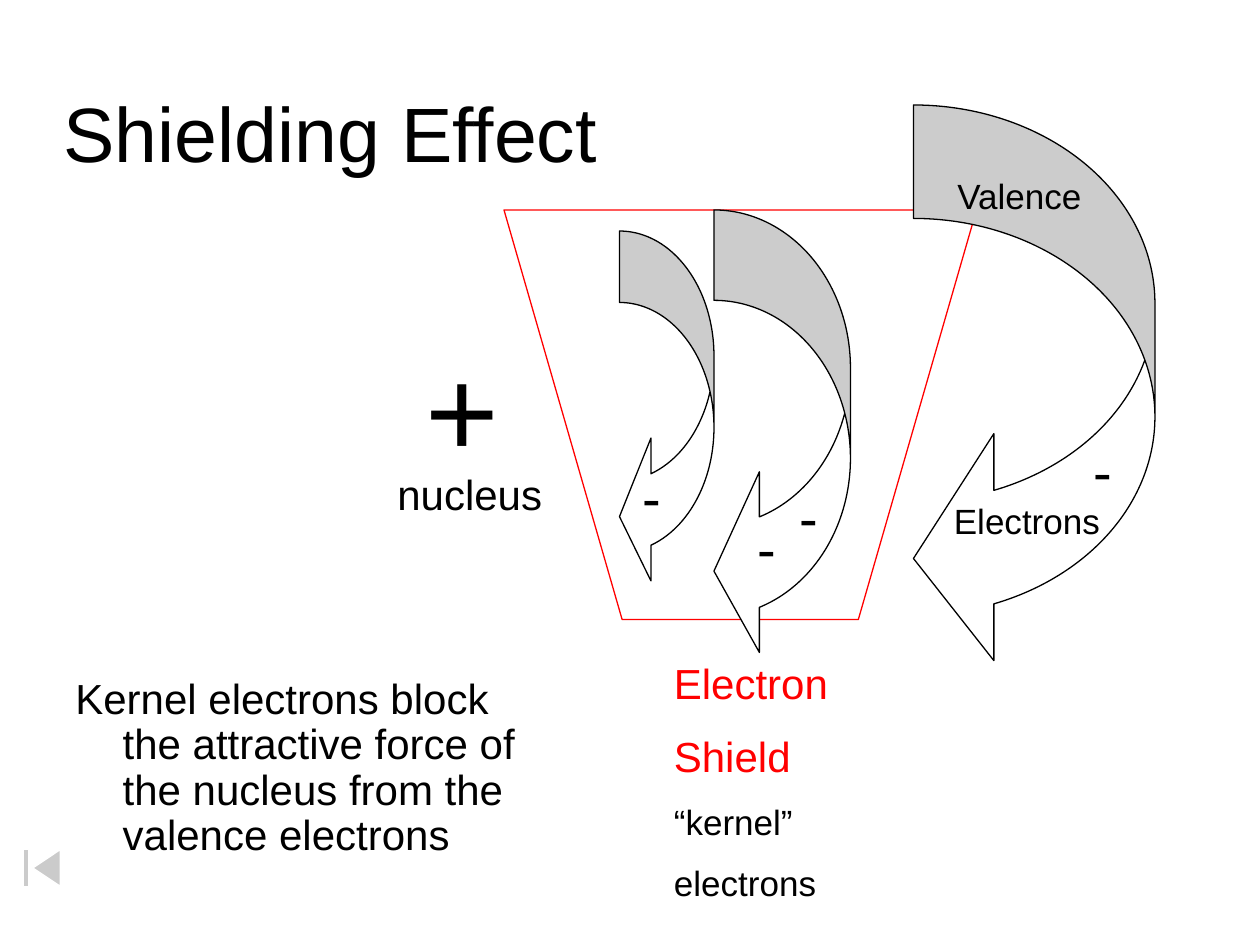
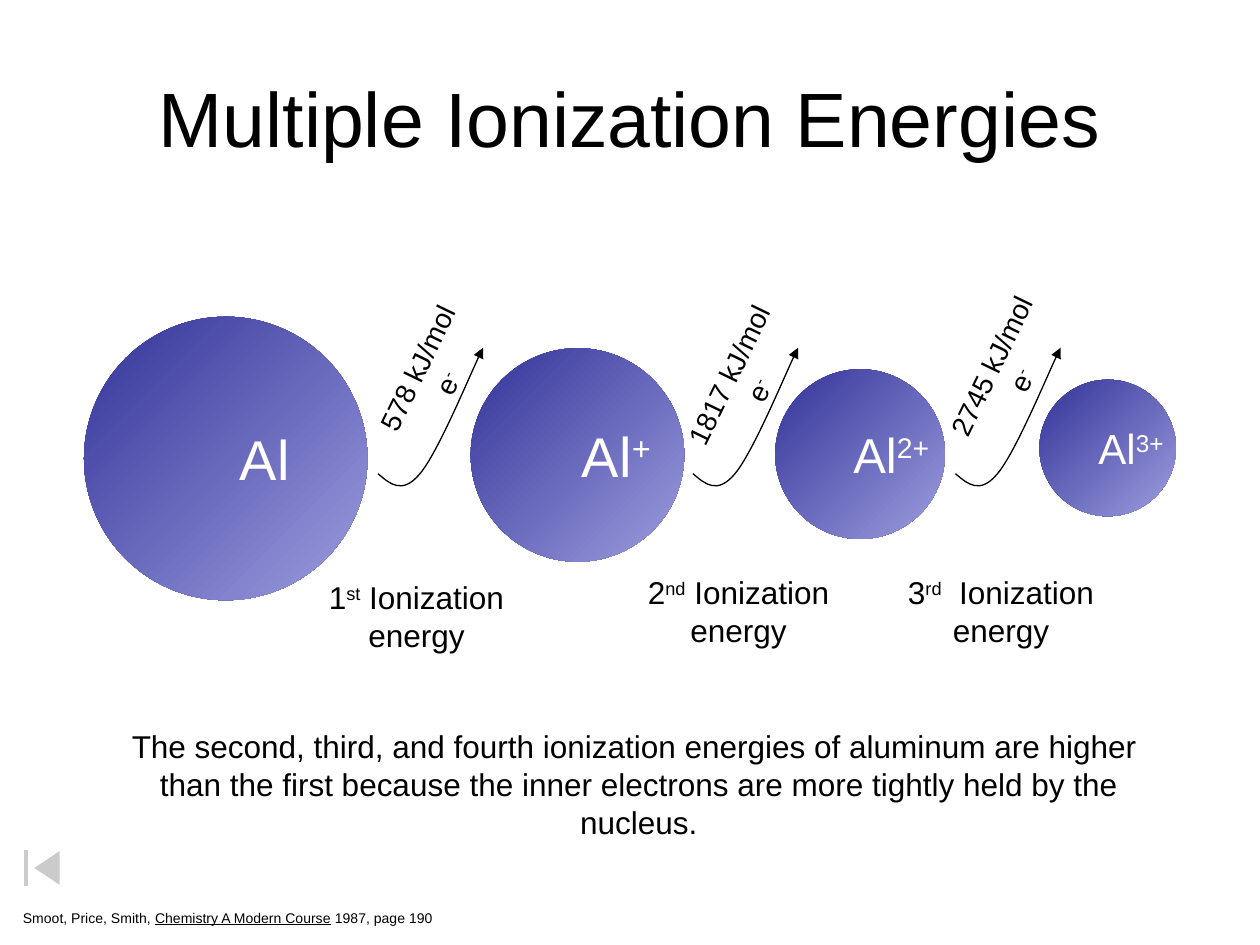
from lxml.etree import SubElement
from pptx import Presentation
from pptx.dml.color import RGBColor
from pptx.enum.shapes import MSO_SHAPE
from pptx.enum.text import MSO_ANCHOR, MSO_AUTO_SIZE, PP_ALIGN
from pptx.oxml.ns import qn
from pptx.util import Pt

# Shared look
FONT = "Arial"
BLACK, WHITE, RED = "000000", "FFFFFF", "FF0000"
DARK, LIGHT = "333399", "9D9DDF"
LEFT, MID = PP_ALIGN.LEFT, PP_ALIGN.CENTER
SPACE = 8.9  # width of one space at 32 pt


def color(code):
    return RGBColor.from_string(code)


def place(box):
    return [Pt(v) for v in box]


def shift(box, x, y, w, h):
    """Place a part relative to the corner of its region."""
    return box[0] + x, box[1] + y, w, h


def paint(shape, fill, line):
    shape.shadow.inherit = False
    if fill:
        shape.fill.solid()
        shape.fill.fore_color.rgb = color(fill)
    else:
        shape.fill.background()
    shape.line.color.rgb = color(line)
    shape.line.width = Pt(0.75)


def add_run(para, text, size, code=BLACK, style=""):
    run = para.add_run()
    run.text = text
    font = run.font
    font.name, font.size = FONT, Pt(size)
    font.color.rgb = color(code)
    if style == "sup":
        font._element.set("baseline", "30000")
    elif style == "line":
        font.underline = True


def write(frame, lines, size, code=BLACK, align=LEFT):
    """Each line is a list of (text, style) runs."""
    for i, line in enumerate(lines):
        para = frame.add_paragraph() if i else frame.paragraphs[0]
        para.alignment = align
        for text, style in line:
            add_run(para, text, size, code, style)


def add_text(slide, box, lines, size, align=LEFT, wrap=False):
    shape = slide.shapes.add_textbox(*place(box))
    frame = shape.text_frame
    frame.word_wrap = wrap
    if not wrap:
        frame.auto_size = MSO_AUTO_SIZE.SHAPE_TO_FIT_TEXT
    write(frame, lines, size, align=align)
    return shape


def plain(*texts):
    return [[(text, "")] for text in texts]


def add_slide(deck, title, box):
    slide = deck.slides.add_slide(deck.slide_layouts[5])
    head = slide.shapes.title
    head.left, head.top, head.width, head.height = place(box)
    head.text_frame.vertical_anchor = MSO_ANCHOR.MIDDLE
    write(head.text_frame, plain(title), 44, align=MID)
    return slide


def add_button(slide):
    shape = slide.shapes.add_shape(
        MSO_SHAPE.ACTION_BUTTON_BEGINNING, *place((0, 482, 48, 28)))
    paint(shape, WHITE, WHITE)
    tint = shape.fill._xPr.find(qn("a:solidFill")).find(qn("a:srgbClr"))
    SubElement(tint, qn("a:alpha"), val="50000")


# Shielding slide
def add_shield(slide, box):
    _, _, w, h = box
    x, y = box[:2]
    pen = slide.shapes.build_freeform(Pt(x), Pt(y))
    pen.add_line_segments([(Pt(x + a * w), Pt(y + b * h))
                           for a, b in ((0.25, 1), (0.75, 1), (1, 0))])
    paint(pen.convert_to_shape(), WHITE, RED)


def add_orbit(slide, box, bends):
    shape = slide.shapes.add_shape(MSO_SHAPE.CURVED_LEFT_ARROW, *place(box))
    paint(shape, WHITE, BLACK)
    for i, bend in enumerate(bends):
        shape.adjustments[i] = bend


def add_atom(slide, box):
    def label(text, size, *part):
        add_text(slide, shift(box, *part), plain(text), size)

    def minus(x, y):
        label("-", 32, x, y, 25, 45)

    add_shield(slide, shift(box, 72, 60, 270, 234))
    label("+", 72, 20, 126, 56, 94)
    label("nucleus", 24, 4, 204, 97, 36)

    # Valence shell
    add_orbit(slide, shift(box, 306, 0, 138, 324), (0.47, 0.94, 0.333))
    label("Valence", 20, 324, 36, 87, 31)
    label("Electrons", 20, 322, 222, 98, 31)
    minus(402, 186)

    # Kernel shells
    add_orbit(slide, shift(box, 192, 60, 78, 258), (0.662, 1.323, 0.333))
    add_orbit(slide, shift(box, 138, 72, 54, 204), (0.756, 1.511, 0.333))
    for x, y in ((144, 200.6), (210, 230), (234, 212)):
        minus(x, y)


def add_key(slide, box):
    frame = add_text(slide, box, [], 24, wrap=True).text_frame
    rows = (("Electron", 24, RED), ("Shield", 24, RED),
            ("“kernel”", 20, BLACK), ("electrons", 20, BLACK))
    for i, (text, size, code) in enumerate(rows):
        para = frame.add_paragraph() if i else frame.paragraphs[0]
        para.space_before = Pt(size * 0.55)
        add_run(para, text, size, code)


def add_note(slide, box):
    text = ("Kernel electrons block the attractive force of the nucleus "
            "from the valence electrons")
    para = add_text(slide, box, plain(text), 24,
                    wrap=True).text_frame.paragraphs[0]
    para.line_spacing = 0.9
    props = para._p.get_or_add_pPr()
    props.set("marL", str(Pt(27)))
    props.set("indent", str(Pt(-27)))


def shield_slide(deck):
    slide = add_slide(deck, "Shielding Effect", (12, 30, 354, 90))
    add_note(slide, (36, 384, 276, 120))
    add_atom(slide, (216, 60, 444, 324))
    add_key(slide, (378, 372, 126, 151))
    add_button(slide)


# Ionization slide
def add_ion(slide, box, charge, size, pad):
    shape = slide.shapes.add_shape(MSO_SHAPE.OVAL, *place(box))
    shape.shadow.inherit = False
    shape.line.fill.background()
    shape.fill.gradient()
    shape.fill.gradient_angle = 315
    for stop, code, spot in zip(shape.fill.gradient_stops,
                                (DARK, LIGHT), (0, 1)):
        stop.color.rgb, stop.position = color(code), spot
    frame = shape.text_frame
    frame.word_wrap = False
    frame.vertical_anchor = MSO_ANCHOR.MIDDLE
    line = [("Al", "")] + ([(charge, "sup")] if charge else [])
    write(frame, [line], size, WHITE, MID)
    props = frame.paragraphs[0]._p.get_or_add_pPr()
    props.set("marL", str(Pt(pad * SPACE)))


def add_curve(slide, box):
    x, y = box[:2]
    spots = ((7, 78), (14, 84), (24, 72), (34, 60), (54, 12), (60, 0))
    pen = slide.shapes.build_freeform(Pt(x), Pt(y + 72))
    pen.add_line_segments([(Pt(x + a), Pt(y + b)) for a, b in spots],
                          close=False)
    shape = pen.convert_to_shape()
    paint(shape, None, BLACK)
    # Turn each three segments into one Bezier curve
    steps = list(shape._element.iter(qn("a:lnTo")))
    track = steps[0].getparent()
    for i in range(0, len(steps), 3):
        curve = SubElement(track, qn("a:cubicBezTo"))
        for step in steps[i:i + 3]:
            curve.append(step[0])
            track.remove(step)
    SubElement(shape.line._get_or_add_ln(), qn("a:tailEnd"), type="triangle")


def add_step(slide, box, cost, mid, rank, name, spot):
    """Arrow, its energy label, and the caption below."""
    add_curve(slide, box)
    x, y, w = mid
    tag = add_text(slide, shift(box, x - w / 2, y - 23, w, 46),
                   [[(cost + " kJ/mol", "")], [("e", ""), ("-", "sup")]],
                   16, MID)
    tag.rotation = 295.9
    add_text(slide, spot, [[(rank, ""), (name, "sup"),
                            (("  " if name == "rd" else " ") + "Ionization",
                             "")], [("energy", "")]], 18, MID)


def ion_slide(deck):
    slide = add_slide(deck, "Multiple Ionization Energies",
                      (36, 21.6, 648, 90))
    ions = ((48, 181, 162, "", 32, 5), (269, 199, 122, "+", 32, 5),
            (443, 211, 97, "2+", 28, 4), (594, 217, 78, "3+", 24, 3))
    for x, y, wide, charge, size, pad in ions:
        add_ion(slide, (x, y, wide, wide), charge, size, pad)

    steps = ((216, "578", (31, 16, 92), "1", "st", (180, 327, 116, 50)),
             (396, "1817", (29, 20, 101), "2", "nd", (362, 324, 120, 50)),
             (546, "2745", (29, 14.5, 101), "3", "rd", (511, 324, 122, 50)))
    for x, *rest in steps:
        add_step(slide, (x, 198.7, 60, 84), *rest)

    # Summary and source
    add_text(slide, (52, 412, 626, 72), plain(
        "The second, third, and fourth ionization energies of aluminum "
        "are higher ",
        "than the first because the inner electrons are more tightly held "
        "by the nucleus."), 18, MID, wrap=True)
    add_text(slide, (6, 516, 252, 17),
             [[("Smoot, Price, Smith, ", ""),
               ("Chemistry A Modern Course", "line"),
               (" 1987, page 190", "")]], 8)
    add_button(slide)


def main():
    deck = Presentation()
    deck.slide_width, deck.slide_height = Pt(720), Pt(540)
    shield_slide(deck)
    ion_slide(deck)
    deck.save("out.pptx")


if __name__ == "__main__":
    main()
